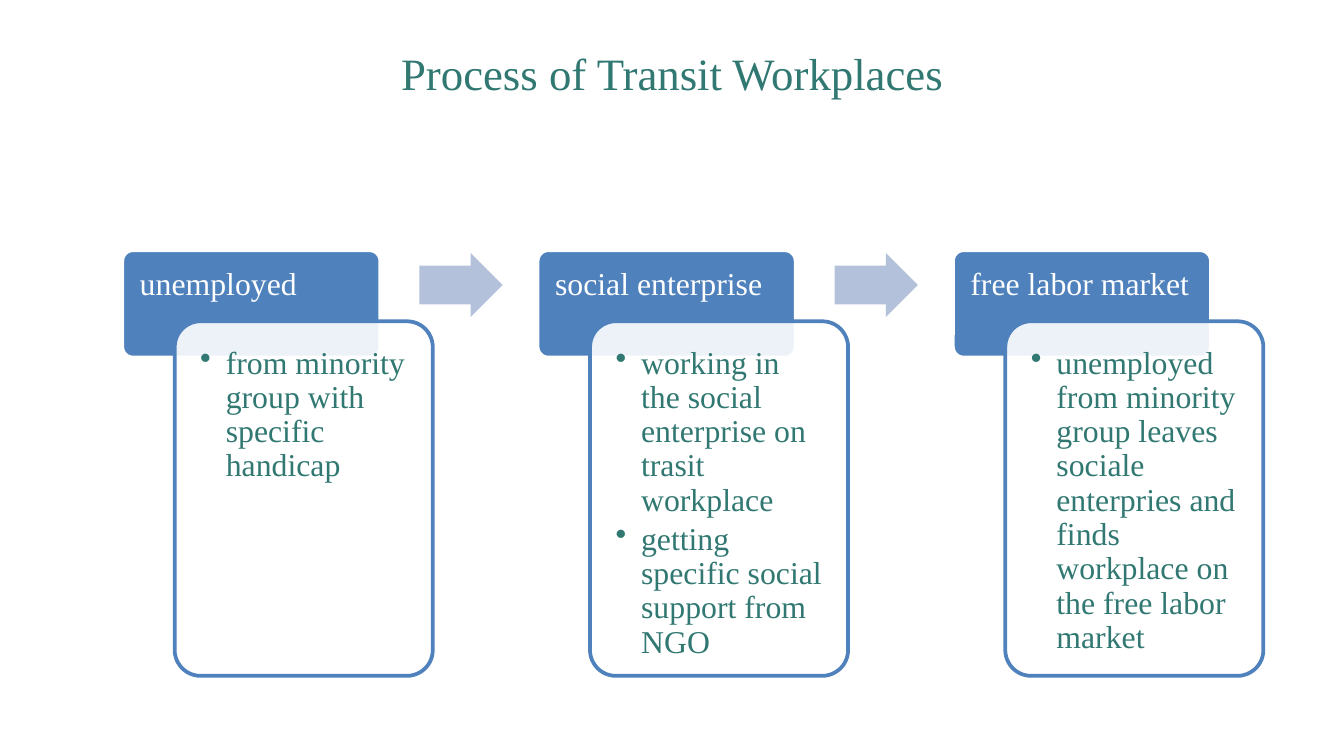
from collections import namedtuple
from dataclasses import dataclass

from lxml import etree
from pptx import Presentation, util as u
from pptx.dml.color import RGBColor
from pptx.enum import shapes, text
from pptx.oxml.ns import qn


@dataclass(frozen=True)
class Theme:
    font: str = "Times New Roman"
    green: str = "307871"
    blue: str = "4F81BD"
    pale: str = "B3C1DB"
    white: str = "FFFFFF"
    head: int = 24
    body: int = 17
    edge: int = 2


T = Theme()
WIDE, HIGH = u.Inches(10), u.Inches(5.625)
COL, ROW = WIDE / 100, HIGH / 100
Box = namedtuple("Box", "x y w h")

STAGES = [
    ("unemployed", ["from minority group with specific handicap"]),
    ("social enterprise", [
        "working in the social enterprise on trasit workplace",
        "getting specific social support from NGO",
    ]),
    ("free labor market", [
        "unemployed from minority group leaves sociale enterpries "
        "and finds workplace on the free labor market",
    ]),
]


def inner(box, x, y, w, h):
    return Box(box.x + x, box.y + y, w, h)


def emu(box):
    return [round(n) for n in
            (box.x * COL, box.y * ROW, box.w * COL, box.h * ROW)]


def write(frame, lines, size=T.body, color=T.green, align=text.PP_ALIGN.LEFT,
          pads=(0.13, 0.13, 0.13, 0.13), lead=0.9, after=0, bullet=False):
    frame.word_wrap = True
    frame.vertical_anchor = text.MSO_ANCHOR.TOP
    (frame.margin_left, frame.margin_top,
     frame.margin_right, frame.margin_bottom) = map(u.Inches, pads)
    for i, line in enumerate(lines):
        para = frame.paragraphs[0] if i == 0 else frame.add_paragraph()
        para.alignment = align
        para.line_spacing = lead
        para.space_before = u.Pt(0)
        para.space_after = u.Pt(after)
        run = para.add_run()
        run.text = line
        run.font.name = T.font
        run.font.size = u.Pt(size)
        run.font.color.rgb = RGBColor.from_string(color)
        if bullet:
            para.level = 1
            props = para._p.get_or_add_pPr()
            props.set("marL", str(u.Inches(0.19)))
            props.set("indent", str(-u.Inches(0.19)))
            etree.SubElement(props, qn("a:buChar")).set("char", "•")


def shape(slide, kind, box, fill, line=None, adj=(0.1,), alpha=None):
    item = slide.shapes.add_shape(kind, *emu(box))
    item.shadow.inherit = False
    for i, val in enumerate(adj):
        item.adjustments[i] = val
    item.fill.solid()
    item.fill.fore_color.rgb = RGBColor.from_string(fill)
    if alpha:
        tint = item._element.spPr.find(qn("a:solidFill")).find(qn("a:srgbClr"))
        etree.SubElement(tint, qn("a:alpha")).set("val", str(alpha * 1000))
    if line:
        item.line.color.rgb = RGBColor.from_string(line)
        item.line.width = u.Pt(T.edge)
    else:
        item.line.fill.background()


def label(slide, box, lines, **style):
    write(slide.shapes.add_textbox(*emu(box)).text_frame, lines, **style)


def title(slide, box, words):
    item = slide.shapes.title
    item.left, item.top, item.width, item.height = emu(box)
    write(item.text_frame, [words], size=T.head, align=text.PP_ALIGN.CENTER,
          pads=(0.07, 0.04, 0.07, 0.04), lead=1.0)


def stage(slide, box, name, notes):
    wide = 19.2
    round_box = shapes.MSO_SHAPE.ROUNDED_RECTANGLE
    shape(slide, round_box, inner(box, 0, 0, wide, 14.2), T.blue, T.white)
    label(slide, inner(box, 0, 0, wide, 9.6), [name], color=T.white,
          pads=(0.13, 0.13, 0.13, 0.07), after=6)
    card = inner(box, box.w - wide, 9.4, wide, box.h - 9.4)
    shape(slide, round_box, card, T.white, T.blue, alpha=90)
    label(slide, inner(card, 0.6, 1.05, card.w - 1.1, card.h - 2.1), notes,
          after=2.5, bullet=True)


def arrow(slide, box):
    shape(slide, shapes.MSO_SHAPE.RIGHT_ARROW, box, T.pale, adj=(0.6, 0.5))


def flow(slide, box, stages):
    wide = 23.1
    step = (box.w - wide) / (len(stages) - 1)
    for i, (name, notes) in enumerate(stages):
        part = inner(box, i * step, 0, wide, box.h)
        stage(slide, part, name, notes)
        if i < len(stages) - 1:
            arrow(slide, inner(part, 22.1, 0.36, 6.2, 8.5))


def main():
    deck = Presentation()
    deck.slide_width, deck.slide_height = WIDE, HIGH
    slide = deck.slides.add_slide(deck.slide_layouts[5])
    title(slide, Box(6.9, 5.33, 86.2, 19.4), "Process of Transit Workplaces")
    flow(slide, Box(9.1, 33.1, 84.9, 56.3), STAGES)
    deck.save("out.pptx")


if __name__ == "__main__":
    main()
